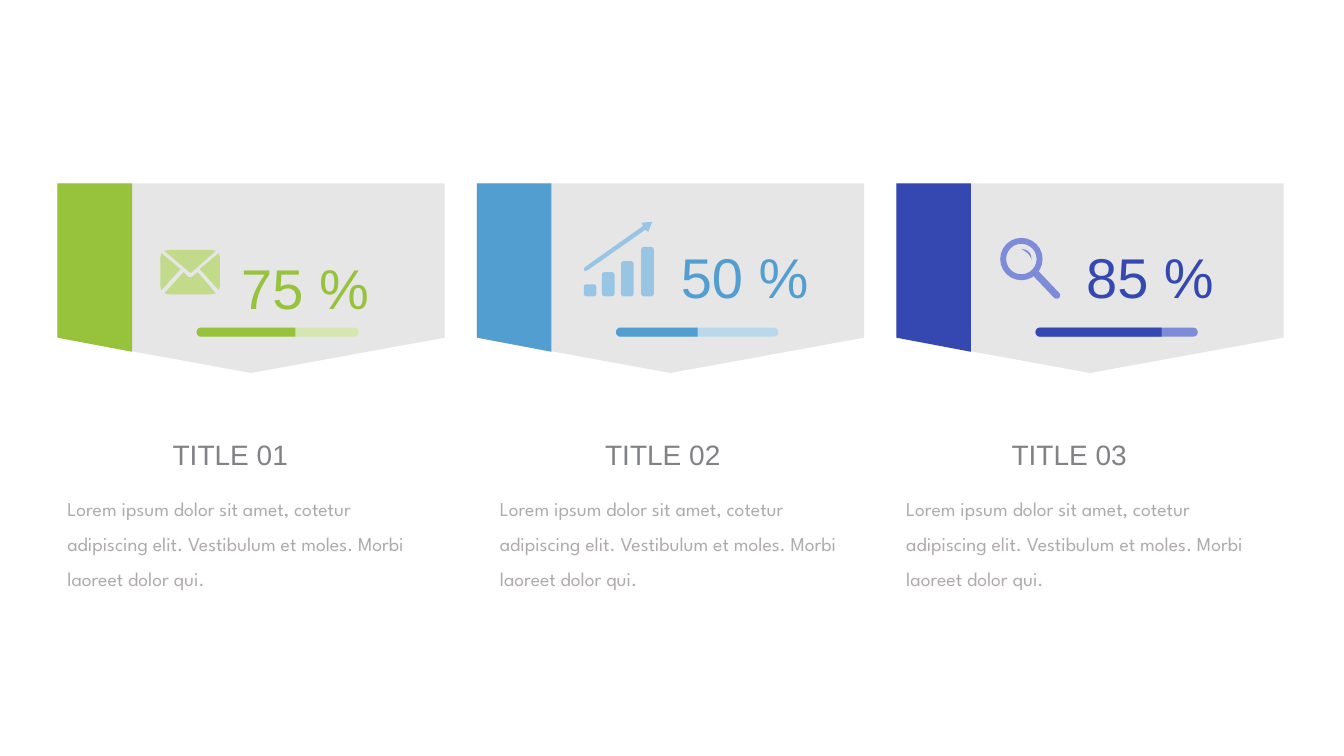
import math
from dataclasses import dataclass
from typing import Callable

import pptx
import pptx.dml.color
import pptx.enum.shapes
import pptx.enum.text
import pptx.util
from pptx.util import Inches

Point = tuple[float, float]
SHAPE = pptx.enum.shapes.MSO_SHAPE
ALIGN = pptx.enum.text.PP_ALIGN
BODY = ("Lorem ipsum dolor sit amet, cotetur adipiscing elit. "
        "Vestibulum et moles. Morbi laoreet dolor qui.")
PANEL_LEFT, PANEL_PITCH, PANEL_WIDTH = 0.57, 4.16, 3.84
PANEL_TOP, PANEL_SIDE, PANEL_TIP = 1.82, 3.35, 3.7
STRIPE_WIDTH, STRIPE_BOTTOM = 0.74, 3.49
BAR_OFFSET, BAR_TOP, BAR_WIDTH, BAR_HEIGHT = 1.38, 3.25, 1.61, 0.09


def rgb(color: str) -> pptx.dml.color.RGBColor:
    return pptx.dml.color.RGBColor.from_string(color)


def paint(sp, color: str) -> None:
    sp.fill.solid()
    sp.fill.fore_color.rgb = rgb(color)
    sp.line.fill.background()
    sp.shadow.inherit = False


def add_outline(s, contours: list[list[Point]], color: str) -> None:
    """Draw closed contours, given in inches, as one freeform."""
    emu = [[(Inches(x), Inches(y)) for x, y in contour] for contour in contours]
    builder = s.shapes.build_freeform(*emu[0][0])
    for i, contour in enumerate(emu):
        if i:
            builder.move_to(*contour[0])
        builder.add_line_segments(contour[1:], close=True)
    paint(builder.convert_to_shape(), color)


def add_preset(s, kind, x: float, y: float, w: float, h: float, color: str,
               adjustment: float, rotation: float = 0) -> None:
    sp = s.shapes.add_shape(kind, Inches(x), Inches(y), Inches(w), Inches(h))
    sp.adjustments[0] = adjustment
    sp.rotation = rotation
    paint(sp, color)


def add_text(s, text: str, x: float, y: float, w: float, h: float, size: int,
             color: str, font: str = "Arial", align=ALIGN.CENTER) -> None:
    tf = s.shapes.add_textbox(Inches(x), Inches(y), Inches(w), Inches(h)).text_frame
    tf.word_wrap = True
    tf.vertical_anchor = pptx.enum.text.MSO_ANCHOR.MIDDLE
    p = tf.paragraphs[0]
    p.alignment = align
    p.line_spacing = 1.5
    r = p.add_run()
    r.text = text
    r.font.name = font
    r.font.size = pptx.util.Pt(size)
    r.font.color.rgb = rgb(color)


def curve(a: Point, b: Point, c: Point, d: Point, steps: int = 12) -> list[Point]:
    """Sample a cubic Bezier curve."""
    points = []
    for i in range(steps + 1):
        t = i / steps
        weights = ((1 - t) ** 3, 3 * t * (1 - t) ** 2, 3 * t * t * (1 - t), t ** 3)
        points.append((sum(k * q[0] for k, q in zip(weights, (a, b, c, d))),
                       sum(k * q[1] for k, q in zip(weights, (a, b, c, d)))))
    return points


def add_envelope(s, color: str) -> None:
    add_outline(s, [
        [(2.18, 2.84), (2.17, 2.88), (1.98, 2.67), (2.17, 2.51), (2.18, 2.55)],
        [(1.89, 2.71), (2.14, 2.49), (2.1, 2.48), (1.67, 2.48), (1.63, 2.49)],
        [(1.96, 2.7), (1.9, 2.75), (1.87, 2.75), (1.82, 2.7), (1.63, 2.91),
         (1.67, 2.92), (2.1, 2.92), (2.14, 2.91)],
        [(1.6, 2.51), (1.59, 2.55), (1.59, 2.84), (1.6, 2.88), (1.79, 2.67)],
    ], color)


def add_growth(s, color: str) -> None:
    bottom, width = 2.94, 0.125
    for x, top in ((5.79, 2.82), (5.97, 2.7), (6.16, 2.59), (6.36, 2.45)):
        add_preset(s, SHAPE.ROUNDED_RECTANGLE, x, top, width, bottom - top, color, 0.22)
    add_outline(s, [[(6.47, 2.2), (6.36, 2.21), (6.38, 2.24), (5.8, 2.65), (5.79, 2.67),
                     (5.8, 2.69), (5.83, 2.68), (6.4, 2.28), (6.43, 2.3)]], color)


def add_magnifier(s, color: str) -> None:
    add_preset(s, SHAPE.DONUT, 9.92, 2.36, 0.42, 0.42, color, 0.14)
    add_preset(s, SHAPE.ROUNDED_RECTANGLE, 10.2, 2.79, 0.36, 0.07, color, 0.5, 46.5)
    start, end = (10.13, 2.47), (10.23, 2.58)
    glint = (curve(start, start, (10.24, 2.47), end)
             + curve(end, end, (10.23, 2.52), start))
    add_outline(s, [glint], color)


@dataclass
class Card:
    title: str
    percent: str
    color: str
    icon_color: str
    track_color: str
    filled: float
    text_left: float
    percent_left: float
    percent_top: float
    add_icon: Callable


CARDS = [
    Card("TITLE 01", "75 %", "97C33C", "C1DB8A", "D5E7B1", 0.98,
         0.57, 2.27, 2.38, add_envelope),
    Card("TITLE 02", "50 %", "539ED0", "98C5E3", "BAD8EC", 0.81,
         4.86, 6.63, 2.27, add_growth),
    Card("TITLE 03", "85 %", "3547B1", "7E8BD8", "7E8BD8", 1.25,
         8.89, 10.65, 2.27, add_magnifier),
]


def add_panel(s, x: float, color: str) -> None:
    right, stripe = x + PANEL_WIDTH, x + STRIPE_WIDTH
    add_outline(s, [[(x, PANEL_TOP), (right, PANEL_TOP), (right, PANEL_SIDE),
                     (x + PANEL_WIDTH / 2, PANEL_TIP), (x, PANEL_SIDE)]], "E7E6E6")
    add_outline(s, [[(x, PANEL_TOP), (stripe, PANEL_TOP),
                     (stripe, STRIPE_BOTTOM), (x, PANEL_SIDE)]], color)


def add_progress(s, x: float, card: Card) -> None:
    add_preset(s, SHAPE.ROUNDED_RECTANGLE, x, BAR_TOP, BAR_WIDTH, BAR_HEIGHT,
               card.track_color, 0.5)
    radius = BAR_HEIGHT / 2
    angles = [math.radians(90 + 15 * i) for i in range(13)]
    cap = [(x + radius + radius * math.cos(a), BAR_TOP + radius + radius * math.sin(a))
           for a in angles]
    end = x + card.filled
    add_outline(s, [cap + [(end, BAR_TOP), (end, BAR_TOP + BAR_HEIGHT)]], card.color)


def main() -> None:
    prs = pptx.Presentation()
    prs.slide_width, prs.slide_height = Inches(13.33), Inches(7.5)
    s = prs.slides.add_slide(prs.slide_layouts.get_by_name("Blank"))
    for i, card in enumerate(CARDS):
        x = PANEL_LEFT + i * PANEL_PITCH
        add_panel(s, x, card.color)
        add_progress(s, x + BAR_OFFSET, card)
        add_text(s, BODY, card.text_left, 4.76, 3.84, 1.15, 14, "AFABAB",
                 "League Spartan", ALIGN.LEFT)
        add_text(s, card.title, card.text_left, 4.16, 3.43, 0.52, 20, "818285")
        card.add_icon(s, card.icon_color)
        add_text(s, card.percent, card.percent_left, card.percent_top, 1.51, 0.61,
                 40, card.color)
    prs.save("out.pptx")


if __name__ == "__main__":
    main()
